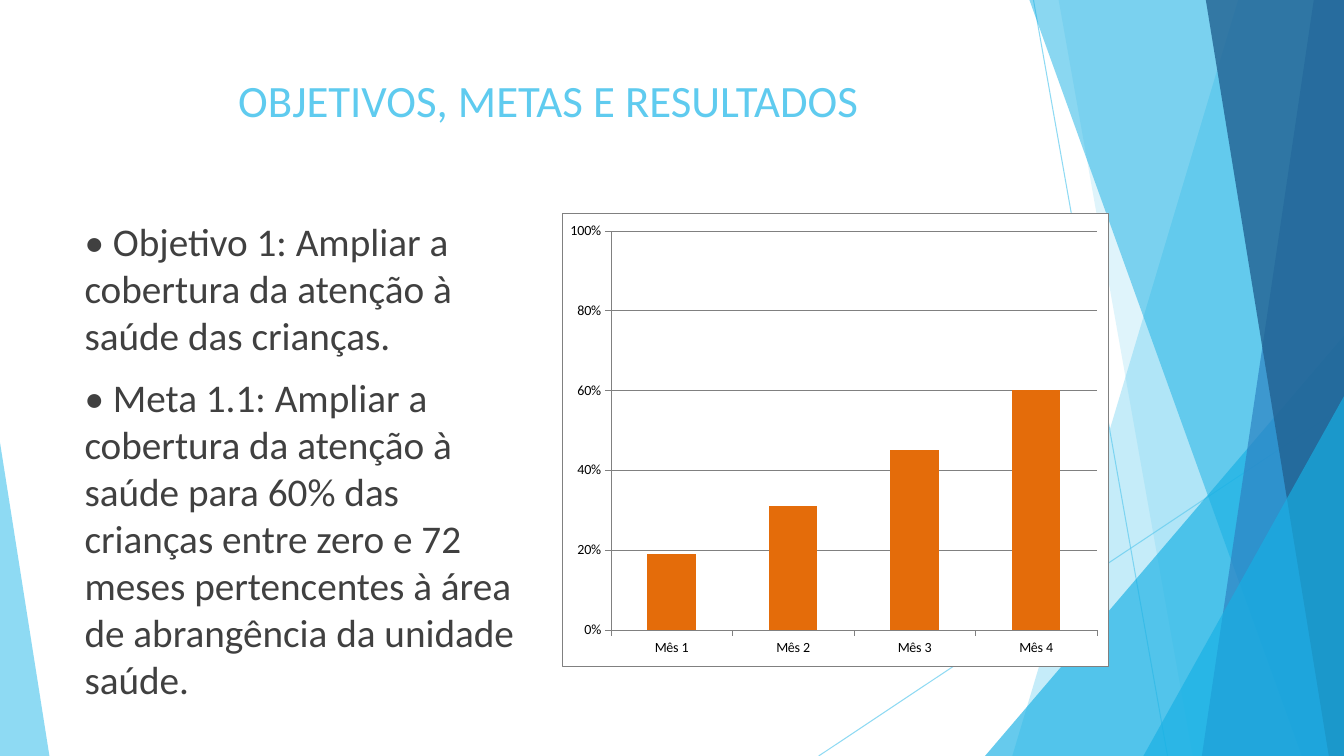
import pptx
import pptx.chart.data
import pptx.dml.color
import pptx.enum.chart
import pptx.enum.shapes
import pptx.enum.text
import pptx.oxml
import pptx.oxml.ns
import pptx.util
from lxml import etree

Inches = pptx.util.Inches
Pt = pptx.util.Pt
qn = pptx.oxml.ns.qn

COLORS = {"sky": "5FCBEF", "cyan": "17B0E4", "blue": "2E83C3", "navy": "226292",
          "text": "404040", "black": "000000", "white": "FFFFFF",
          "grid": "808080", "bar": "E46C0A"}
WIDTH, HEIGHT = 13.33, 7.5


class SlideBuilder:
    """Holds the style and the current slide, and draws each kind of element."""

    font = "Calibri"

    def __init__(self, presentation):
        self.slide = presentation.slides.add_slide(presentation.slide_layouts[5])
        self.shapes = self.slide.shapes

    def rgb(self, color):
        return pptx.dml.color.RGBColor.from_string(COLORS[color])

    def style_font(self, font, size, color):
        font.name, font.size = self.font, Pt(size)
        font.color.rgb = self.rgb(color)

    def fade(self, element, opacity):
        for color in element.iter(qn("a:srgbClr")):
            etree.SubElement(color, qn("a:alpha")).set("val", str(opacity * 1000))

    def paint(self, shape, color, opacity):
        shape.shadow.inherit = False
        shape.fill.solid()
        shape.fill.fore_color.rgb = self.rgb(color)
        shape.line.fill.background()
        self.fade(shape._element.spPr, opacity)

    def line(self, start, end, color, opacity):
        connector = self.shapes.add_connector(
            pptx.enum.shapes.MSO_CONNECTOR.STRAIGHT, *map(Inches, start + end))
        connector.line.width = Pt(0.75)
        connector.line.color.rgb = self.rgb(color)
        properties = connector._element.spPr
        self.fade(properties, opacity)
        etree.SubElement(properties, qn("a:effectLst"))

    def band(self, top_x, bottom_x, color, opacity):
        corners = [(WIDTH, 0), (WIDTH, HEIGHT), (bottom_x, HEIGHT)]
        outline = self.shapes.build_freeform(Inches(top_x), 0)
        outline.add_line_segments([(Inches(x), Inches(y)) for x, y in corners])
        self.paint(outline.convert_to_shape(), color, opacity)

    def triangle(self, left, top, width, apex, color, opacity):
        wedge = self.shapes.add_shape(
            pptx.enum.shapes.MSO_SHAPE.ISOSCELES_TRIANGLE,
            *map(Inches, (left, top, width, HEIGHT - top)))
        wedge.adjustments[0] = apex
        self.paint(wedge, color, opacity)

    def fill_text(self, frame, paragraphs, size, color, align, space_before=0):
        frame.word_wrap = True
        frame.auto_size = pptx.enum.text.MSO_AUTO_SIZE.NONE
        frame.vertical_anchor = pptx.enum.text.MSO_ANCHOR.TOP
        for index, words in enumerate(paragraphs):
            paragraph = frame.add_paragraph() if index else frame.paragraphs[0]
            paragraph.alignment = align
            paragraph.space_before = Pt(space_before)
            run = paragraph.add_run()
            run.text = words
            self.style_font(run.font, size, color)

    def title(self, box, words):
        heading = self.shapes.title
        heading.left, heading.top, heading.width, heading.height = map(Inches, box)
        self.fill_text(heading.text_frame, [words], 32, "sky",
                       pptx.enum.text.PP_ALIGN.CENTER)

    def body(self, box, paragraphs):
        goals = self.shapes.add_textbox(*map(Inches, box))
        self.fill_text(goals.text_frame, paragraphs, 28, "text",
                       pptx.enum.text.PP_ALIGN.LEFT, 10)

    def area_format(self, line=""):
        return pptx.oxml.parse_xml(
            f'<c:spPr {pptx.oxml.ns.nsdecls("c", "a")}><a:solidFill>'
            f'<a:srgbClr val="{COLORS["white"]}"/></a:solidFill>{line}</c:spPr>')

    def style_axis(self, axis):
        self.style_font(axis.tick_labels.font, 10, "black")
        axis.major_tick_mark = pptx.enum.chart.XL_TICK_MARK.OUTSIDE
        self.thin(axis.format.line)

    def thin(self, line):
        line.width = Pt(0.25)
        line.color.rgb = self.rgb("grid")

    def column_chart(self, box, categories, name, values, plot_box):
        data = pptx.chart.data.CategoryChartData(number_format="0%")
        data.categories = categories
        data.add_series(name, values)
        chart = self.shapes.add_chart(
            pptx.enum.chart.XL_CHART_TYPE.COLUMN_CLUSTERED, *map(Inches, box), data).chart
        chart.has_legend = chart.has_title = False
        self.style_font(chart.font, 10, "black")

        columns = chart.plots[0]
        columns.gap_width, columns.vary_by_categories = 150, False
        series = columns.series[0]
        series.format.fill.solid()
        series.format.fill.fore_color.rgb = self.rgb("bar")

        share = chart.value_axis
        for axis in (chart.category_axis, share):
            self.style_axis(axis)
        share.minimum_scale, share.maximum_scale, share.major_unit = 0, 1, 0.2
        share.tick_labels.number_format = "0%"
        share.tick_labels.number_format_is_linked = False
        share.has_major_gridlines = True
        self.thin(share.major_gridlines.format.line)

        space = chart._chartSpace
        border = (f'<a:ln w="{Pt(0.25)}"><a:solidFill>'
                  f'<a:srgbClr val="{COLORS["grid"]}"/></a:solidFill></a:ln>')
        space.find(qn("c:chart")).addnext(self.area_format(border))
        plot_area = space.find(".//" + qn("c:plotArea"))
        plot_area.append(self.area_format())
        for unused in plot_area.findall(qn("c:layout")):
            plot_area.remove(unused)
        layout = etree.Element(qn("c:layout"))
        manual = etree.SubElement(layout, qn("c:manualLayout"))
        settings = [("layoutTarget", "inner"), ("xMode", "edge"), ("yMode", "edge"),
                    *zip("xywh", plot_box)]
        for setting, value in settings:
            etree.SubElement(manual, qn("c:" + setting)).set("val", str(value))
        plot_area.insert(0, layout)


def main():
    presentation = pptx.Presentation()
    presentation.slide_width = Inches(WIDTH)
    presentation.slide_height = Inches(HEIGHT)
    page = SlideBuilder(presentation)

    page.line((10.25, 0), (11.58, HEIGHT), "sky", 70)
    page.line((WIDTH, 4.03), (8.12, HEIGHT), "sky", 70)
    page.band(12.28, 10.04, "sky", 36)
    page.band(10.5, 11.83, "sky", 20)
    page.triangle(9.77, 3.33, 3.56, 1, "cyan", 66)
    page.band(10.21, 12.91, "cyan", 50)
    page.band(13.03, 11.92, "blue", 70)
    page.band(11.96, 13.18, "navy", 80)
    page.triangle(11.34, 3.93, 1.99, 1, "cyan", 66)
    page.triangle(0, 4.39, 0.49, 0, "sky", 70)

    page.title((0.74, 0.67, 9.4, 1.44), "OBJETIVOS, METAS E RESULTADOS")
    page.body((0.74, 2.11, 4.58, 4.5), [
        "• Objetivo 1: Ampliar a cobertura da atenção à saúde das crianças.",
        "• Meta 1.1: Ampliar a cobertura da atenção à saúde para 60% das crianças "
        "entre zero e 72 meses pertencentes à área de abrangência da unidade saúde."])
    page.column_chart((5.57, 2.11, 5.42, 4.5), [f"Mês {month}" for month in range(1, 5)],
                      "Series 1", (0.19, 0.31, 0.45, 0.6), (0.09, 0.04, 0.89, 0.88))
    presentation.save("out.pptx")


if __name__ == "__main__":
    main()
